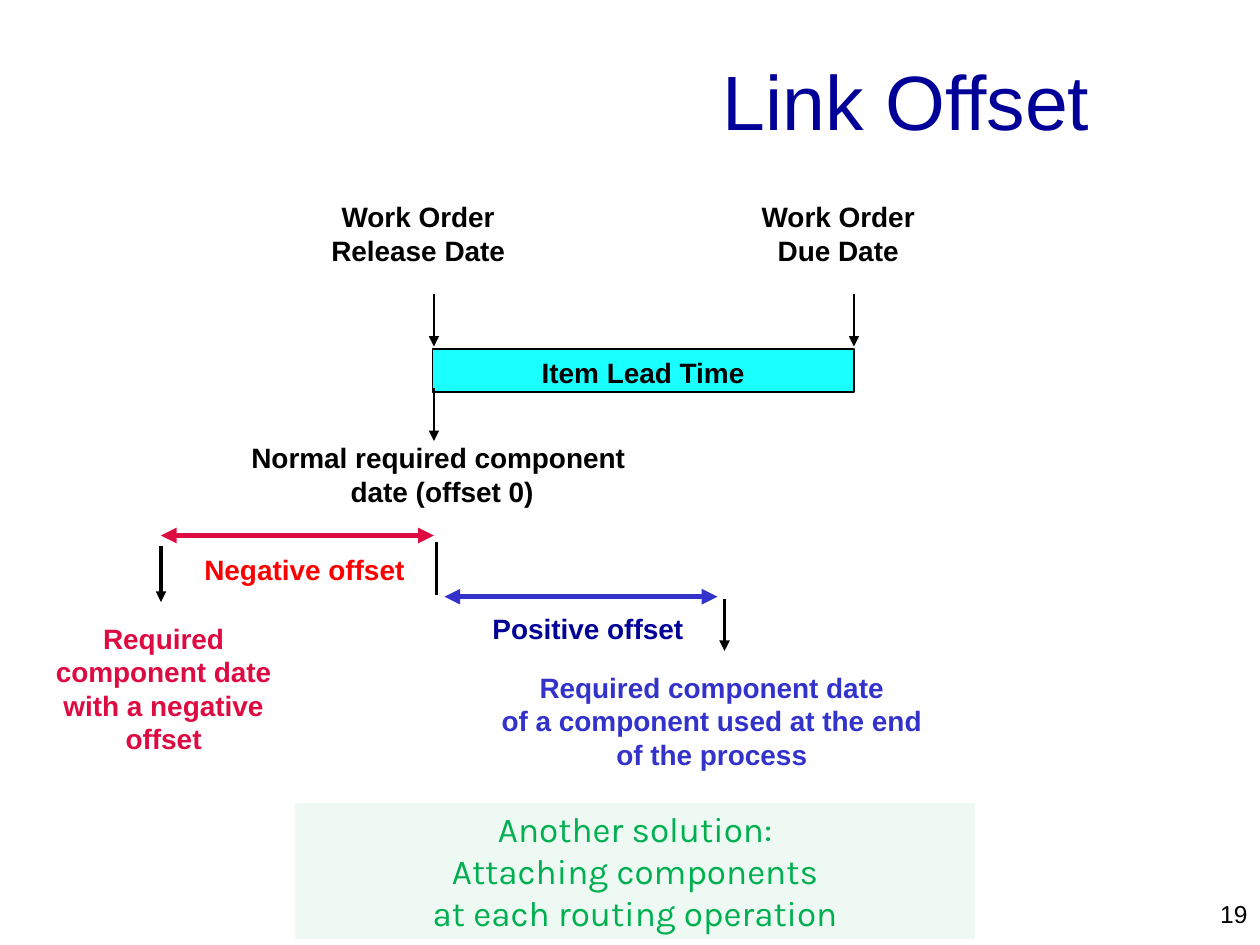
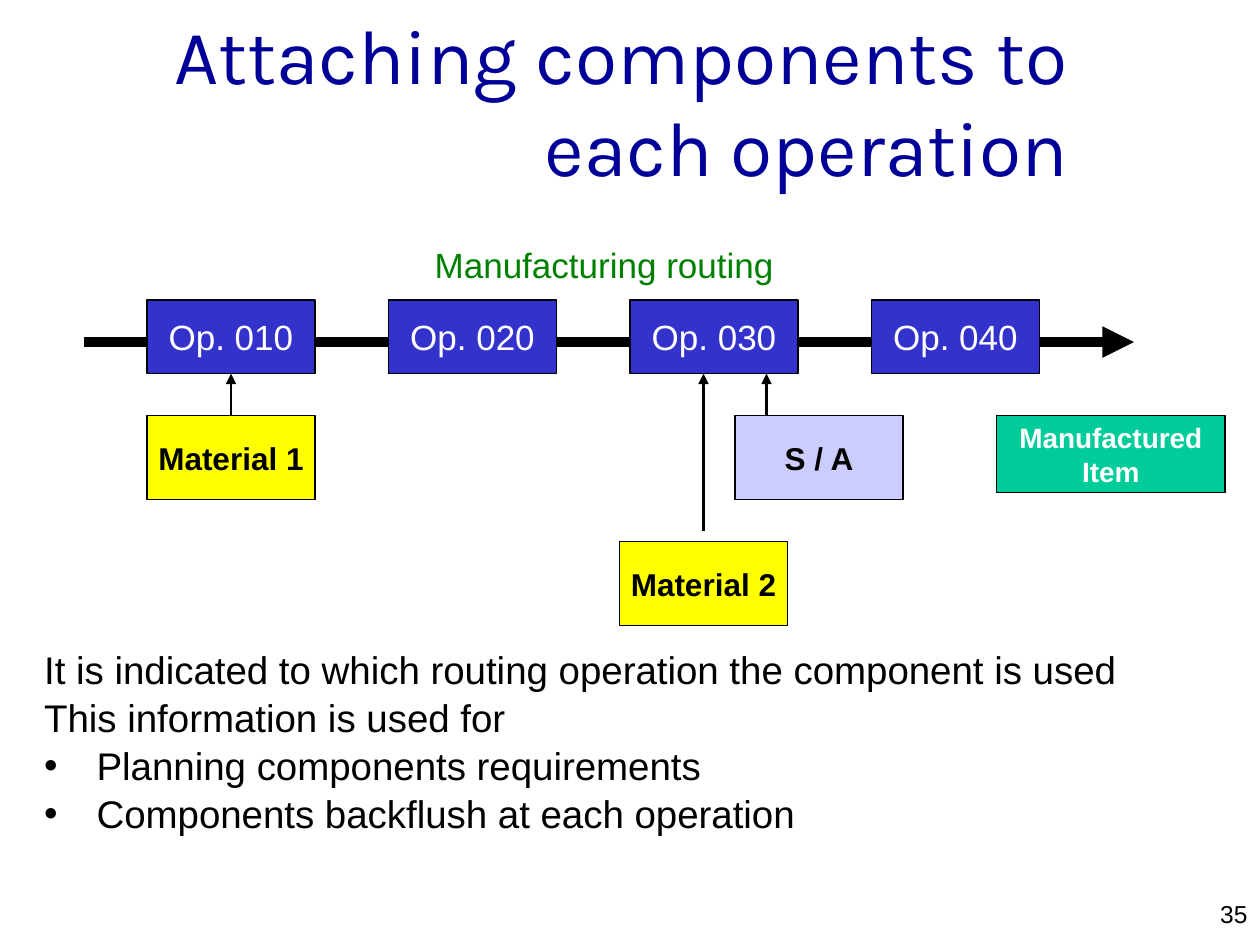
from dataclasses import dataclass

from lxml.etree import SubElement
from pptx import Presentation
from pptx.dml.color import RGBColor
from pptx.enum.shapes import MSO_CONNECTOR, MSO_SHAPE
from pptx.enum.text import MSO_ANCHOR, MSO_AUTO_SIZE, PP_ALIGN
from pptx.oxml.ns import qn
from pptx.util import Pt


@dataclass(frozen=True)
class Theme:
    # Colours
    navy: str = "000099"
    blue: str = "3333CC"
    cyan: str = "1AFFFF"
    red: str = "FF0000"
    rose: str = "DE0A42"
    leaf: str = "00B050"
    mint: str = "EEF9F4"
    green: str = "008000"
    teal: str = "00CC99"
    yellow: str = "FFFF00"
    lilac: str = "CCCCFF"
    black: str = "000000"
    white: str = "FFFFFF"
    # Fonts and type sizes
    sans: str = "Arial"
    karla: str = "Karla"
    title: int = 44
    body: int = 22
    large: int = 20
    medium: int = 18
    label: int = 16
    number: int = 14


T = Theme()
LEFT, MID, RIGHT = PP_ALIGN.LEFT, PP_ALIGN.CENTER, PP_ALIGN.RIGHT
INDENT = Pt(30)


def put(target, values):
    for name, value in values.items():
        setattr(target, name, value)


def look(size, color=T.black, bold=False, face=T.sans):
    return {"size": Pt(size), "bold": bold, "name": face}, color


def write(frame, text, style, align=MID, anchor=MSO_ANCHOR.MIDDLE, wrap=True):
    """Fill a frame, one paragraph a line, in one style."""
    put(frame, {"text": text, "word_wrap": wrap, "vertical_anchor": anchor,
                "auto_size": MSO_AUTO_SIZE.NONE})
    font, color = style
    for para in frame.paragraphs:
        para.alignment = align
        for run in para.runs:
            put(run.font, font)
            run.font.color.rgb = RGBColor.from_string(color)


def place(shape, area):
    put(shape, dict(zip(("left", "top", "width", "height"), map(Pt, area))))


def label(slide, text, area, style, align=MID, wrap=True, inset=False,
          anchor=MSO_ANCHOR.TOP):
    frame = slide.shapes.add_textbox(*map(Pt, area)).text_frame
    if not inset:
        put(frame, dict.fromkeys(("margin_left", "margin_top",
                                  "margin_right", "margin_bottom"), 0))
    write(frame, text, style, align, anchor, wrap)


def box(slide, text, area, fill, style, edge=T.black, width=0.75,
        anchor=MSO_ANCHOR.MIDDLE):
    shape = slide.shapes.add_shape(MSO_SHAPE.RECTANGLE, *map(Pt, area))
    shape.shadow.inherit = False
    shape.fill.solid()
    shape.fill.fore_color.rgb = RGBColor.from_string(fill)
    shape.line.color.rgb = RGBColor.from_string(edge)
    shape.line.width = Pt(width)
    write(shape.text_frame, text, style, anchor=anchor, wrap=False)
    return shape


def arrow(slide, start, end, width, color=T.black, ends=("tailEnd",)):
    """Draw a straight line with a triangle at each named end."""
    line = slide.shapes.add_connector(MSO_CONNECTOR.STRAIGHT,
                                      *map(Pt, (*start, *end)))
    line.line.color.rgb = RGBColor.from_string(color)
    line.line.width = Pt(width)
    stroke = line.line._get_or_add_ln()
    for tip in ends:
        SubElement(stroke, qn("a:" + tip), type="triangle")
    SubElement(line._element.spPr, qn("a:effectLst"))
    return line


def begin(deck, layout, title, area, number, face=T.sans):
    """Add a slide with its title and page number."""
    slide = deck.slides.add_slide(deck.slide_layouts[layout])
    place(slide.shapes.title, area)
    write(slide.shapes.title.text_frame, title,
          look(T.title, T.navy, face=face), RIGHT)
    label(slide, number, (570, 510, 150, 18), look(T.number), RIGHT,
          inset=True)
    return slide


def bullets(shape, area, lines):
    """Fill the body with (text, bulleted) lines on one hanging indent."""
    place(shape, area)
    write(shape.text_frame, "\n".join(text for text, _ in lines),
          look(T.body), LEFT)
    for para, (_, marked) in zip(shape.text_frame.paragraphs, lines):
        para.space_before = Pt(1)
        props = para._p.get_or_add_pPr()
        props.set("marL", str(INDENT))
        props.set("indent", str(-INDENT))
        if marked:
            SubElement(props, qn("a:buChar"), char="•")
        else:
            SubElement(props, qn("a:buNone"))


def offset(deck):
    slide = begin(deck, 5, "Link Offset", (18, 12, 612, 90), "19")
    bold = look(T.label, bold=True)
    rose = look(T.label, T.rose, True)
    blue = look(T.label, T.blue, True)
    both = ("headEnd", "tailEnd")
    release, due, early, late = 248, 488, 92, 414

    # Lead time bar
    box(slide, "Item Lead Time", (247, 199.5, 241, 24.5), T.cyan, bold,
        width=0, anchor=MSO_ANCHOR.TOP)

    # Captions: text, area, style, wrap
    for text, area, style, wrap in (
        ("Work Order Due Date", (422, 114, 114, 39), bold, True),
        ("Work Order\nRelease Date", (152, 114, 174, 39), bold, True),
        ("Normal required component\n date (offset 0)",
         (142.5, 252, 216, 39), bold, False),
        ("Negative offset", (116, 315.5, 116, 19.5),
         look(T.label, T.red, True), False),
        ("Positive offset", (280.5, 349.5, 111, 19.5),
         look(T.label, T.navy, True), False),
        ("Required component date\nwith a negative offset",
         (14.5, 355, 158, 78), rose, True),
        ("Required component date\n"
         "of a component used at the end of the process",
         (286.5, 383, 240.5, 58.5), blue, True),
    ):
        label(slide, text, area, style, wrap=wrap)

    # Date markers
    for x, top, foot, width in (
        (release, 168, 198, 0.75), (due, 168, 198, 0.75),
        (release, 222, 252, 0.75),
        (early, 312, 344, 0), (late, 342.5, 372, 0),
    ):
        arrow(slide, (x, top), (x, foot), width)
    arrow(slide, (249.5, 310), (249.5, 340), 0, ends=())

    # Offset spans
    arrow(slide, (release, 306), (early, 306), 3, T.rose, both)
    arrow(slide, (254, 341), (410, 341), 3, T.blue, both)

    # Other solution
    box(slide,
        "Another solution:\nAttaching components\nat each routing operation",
        (167.5, 457.5, 391, 80), T.mint,
        look(T.large, T.leaf, face=T.karla), T.white, 2.25)


def routing(deck):
    slide = begin(deck, 1, "Attaching components to each operation",
                  (37, 12, 581, 90), "35", T.karla)
    wide, first, pitch, top, foot, row = 96, 84, 138, 171.5, 213.5, 237.5
    bold = look(T.medium, bold=True)

    # Routing line and operations
    arrow(slide, (48, 195.5), (648, 195.5), 6)
    ops = [box(slide, f"Op. 0{i + 1}0",
               (first + i * pitch, top, wide, foot - top),
               T.blue, look(T.large, T.white)) for i in range(4)]

    # Components and the finished item
    box(slide, "Manufactured\nItem", (569.5, row, 130.5, 44), T.teal,
        look(T.label, T.white, True))
    inputs = [box(slide, text, (x, y, wide, 48), fill, bold)
              for text, x, y, fill in (
                  ("Material 1", first, row, T.yellow),
                  ("Material 2", 354, 309.5, T.yellow),
                  ("S / A", 420, row, T.lilac))]

    # Links up to the operations
    link = arrow(slide, (132, row), (132, foot), 1.5)
    link.begin_connect(inputs[0], 0)
    link.end_connect(ops[0], 2)
    for x, y in ((402, 303.5), (438, row)):
        arrow(slide, (x, y), (x, foot), 1.5)

    # Explanation
    bullets(slide.placeholders[1], (18, 366.5, 635, 114), (
        ("It is indicated to which routing operation the component is used",
         False),
        ("This information is used for", False),
        ("Planning components requirements", True),
        ("Components backflush at each operation", True)))
    label(slide, "Manufacturing routing", (240.5, 135.5, 209.5, 31.5),
          look(T.large, T.green), wrap=False, inset=True,
          anchor=MSO_ANCHOR.MIDDLE)


def main():
    deck = Presentation()
    put(deck, {"slide_width": Pt(720), "slide_height": Pt(540)})
    offset(deck)
    routing(deck)
    deck.save("out.pptx")


if __name__ == "__main__":
    main()
